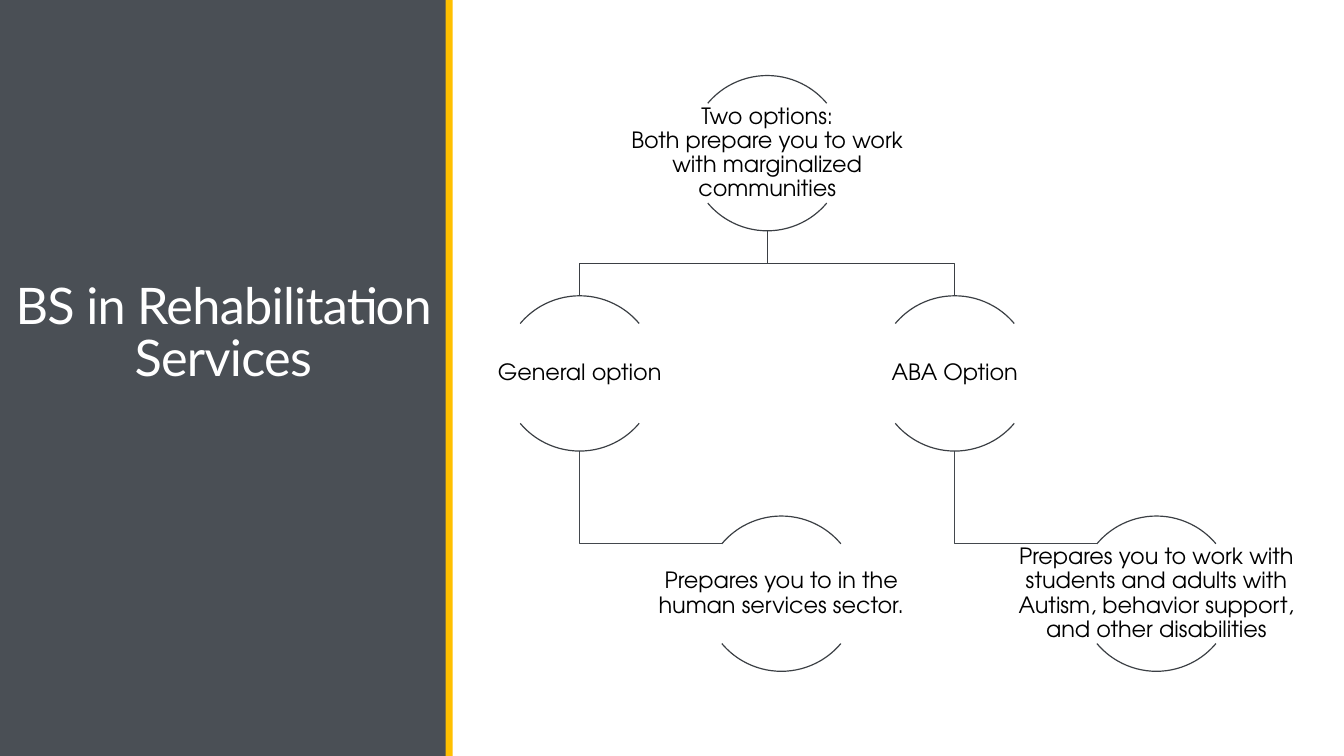
from dataclasses import dataclass

from lxml.etree import SubElement
from pptx import Presentation
from pptx.dml.color import RGBColor
from pptx.enum.shapes import MSO_SHAPE
from pptx.enum.text import MSO_ANCHOR, MSO_AUTO_SIZE, PP_ALIGN
from pptx.oxml.ns import qn
from pptx.util import Inches, Pt

CIRCLE = 1.54
ROW_STEP = 2.185
TOP = 0.75
TEXT_W, TEXT_H = 3.08, 0.99
TEXT_DROP = 0.275
ARC_HALF = 0.59  # half the width of the drawn part of an arc
LINE_W = 0.85
ARC_ANGLES = ((132, 192), (24, 84))
DARK, LEAF_LINE = "3B3F44", "43484D"


@dataclass(frozen=True)
class Node:
    text: str
    cx: float
    row: int

    @property
    def top(self) -> float:
        return TOP + self.row * ROW_STEP

    @property
    def bottom(self) -> float:
        return self.top + CIRCLE


@dataclass(frozen=True)
class Panel:
    left: float
    width: float
    color: str


PANELS = (Panel(0, 4.43, "4A4F55"), Panel(4.42, 0.07, "FFC000"))

ROOT = Node("Two options:\nBoth prepare you to work with marginalized communities", 7.61, 0)
GENERAL = Node("General option", 5.75, 1)
ABA = Node("ABA Option", 9.47, 1)
GENERAL_USE = Node("Prepares you to in the human services sector.", GENERAL.cx + 2, 2)
ABA_USE = Node("Prepares you to work with students and adults with Autism, "
               "behavior support, and other disabilities", ABA.cx + 2, 2)
NODES = (ROOT, GENERAL, GENERAL_USE, ABA, ABA_USE)
BRANCHES = (ABA, GENERAL)
LEAVES = ((ABA, ABA_USE), (GENERAL, GENERAL_USE))


def rgb(color: str) -> RGBColor:
    return RGBColor.from_string(color)


def set_attrs(target, values: dict) -> None:
    for name, value in values.items():
        setattr(target, name, value)


def outline(sp, color: str) -> None:
    """Leave only a thin line on the shape."""
    sp.shadow.inherit = False
    sp.fill.background()
    sp.line.color.rgb = rgb(color)
    sp.line.width = Pt(LINE_W)


def format_text(tf, size: int, font: str, color: str, spacing: float) -> None:
    set_attrs(tf, {"word_wrap": True, "auto_size": MSO_AUTO_SIZE.NONE,
                   "vertical_anchor": MSO_ANCHOR.MIDDLE})
    p = tf.paragraphs[0]
    set_attrs(p, {"alignment": PP_ALIGN.CENTER, "line_spacing": spacing})
    for r in p.runs:
        set_attrs(r.font, {"size": Pt(size), "name": font, "bold": False})
        r.font.color.rgb = rgb(color)
    for br in p._p.findall(qn("a:br")):
        SubElement(br, qn("a:rPr"), sz=str(size * 100))


def add_panels(s) -> None:
    """Draw the side panels behind the title."""
    for i, panel in enumerate(PANELS):
        sp = s.shapes.add_shape(MSO_SHAPE.RECTANGLE, Inches(panel.left), 0,
                                Inches(panel.width), Inches(7.5))
        sp.shadow.inherit = False
        sp.fill.solid()
        sp.fill.fore_color.rgb = rgb(panel.color)
        sp.line.fill.background()
        s.shapes._spTree.insert(2 + i, sp._element)


def add_title(s, text: str) -> None:
    title = s.shapes.title
    set_attrs(title, {"left": 0, "top": Inches(0.9),
                      "width": Inches(4.43), "height": Inches(4.85)})
    tf = title.text_frame
    tf.text = text
    format_text(tf, 36, "Lato", "FFFFFF", 0.85)
    tf.paragraphs[0].runs[0].font._element.set("spc", "-50")


def add_path(s, points: list[tuple[float, float]], color: str) -> None:
    start, *rest = [(Inches(x), Inches(y)) for x, y in points]
    builder = s.shapes.build_freeform(*start)
    builder.add_line_segments(rest, close=False)
    outline(builder.convert_to_shape(), color)


def add_links(s) -> None:
    for parent, leaf in LEAVES:
        y = leaf.top + TEXT_DROP
        add_path(s, [(parent.cx, parent.bottom), (parent.cx, y),
                     (leaf.cx - ARC_HALF, y)], LEAF_LINE)
    for branch in BRANCHES:
        y = (ROOT.bottom + branch.top) / 2
        add_path(s, [(ROOT.cx, ROOT.bottom), (ROOT.cx, y),
                     (branch.cx, y), (branch.cx, branch.top)], DARK)


def add_node(s, node: Node) -> None:
    for angles in ARC_ANGLES:
        arc = s.shapes.add_shape(MSO_SHAPE.ARC, Inches(node.cx - CIRCLE / 2),
                                 Inches(node.top), Inches(CIRCLE), Inches(CIRCLE))
        for i, angle in enumerate(angles):
            arc.adjustments[i] = angle
        outline(arc, DARK)
    box = s.shapes.add_textbox(Inches(node.cx - TEXT_W / 2), Inches(node.top + TEXT_DROP),
                               Inches(TEXT_W), Inches(TEXT_H))
    tf = box.text_frame
    sides = ("left", "top", "right", "bottom")
    set_attrs(tf, {f"margin_{side}": Inches(0.01) for side in sides})
    tf.paragraphs[0].text = node.text
    format_text(tf, 16, "TeX Gyre Adventor", "000000", 0.9)


def main() -> None:
    prs = Presentation()
    set_attrs(prs, {"slide_width": Inches(13.33), "slide_height": Inches(7.5)})
    s = prs.slides.add_slide(prs.slide_layouts[5])
    add_panels(s)
    add_title(s, "BS in Rehabilitation Services")
    add_links(s)
    for node in NODES:
        add_node(s, node)
    prs.save("out.pptx")


if __name__ == "__main__":
    main()
